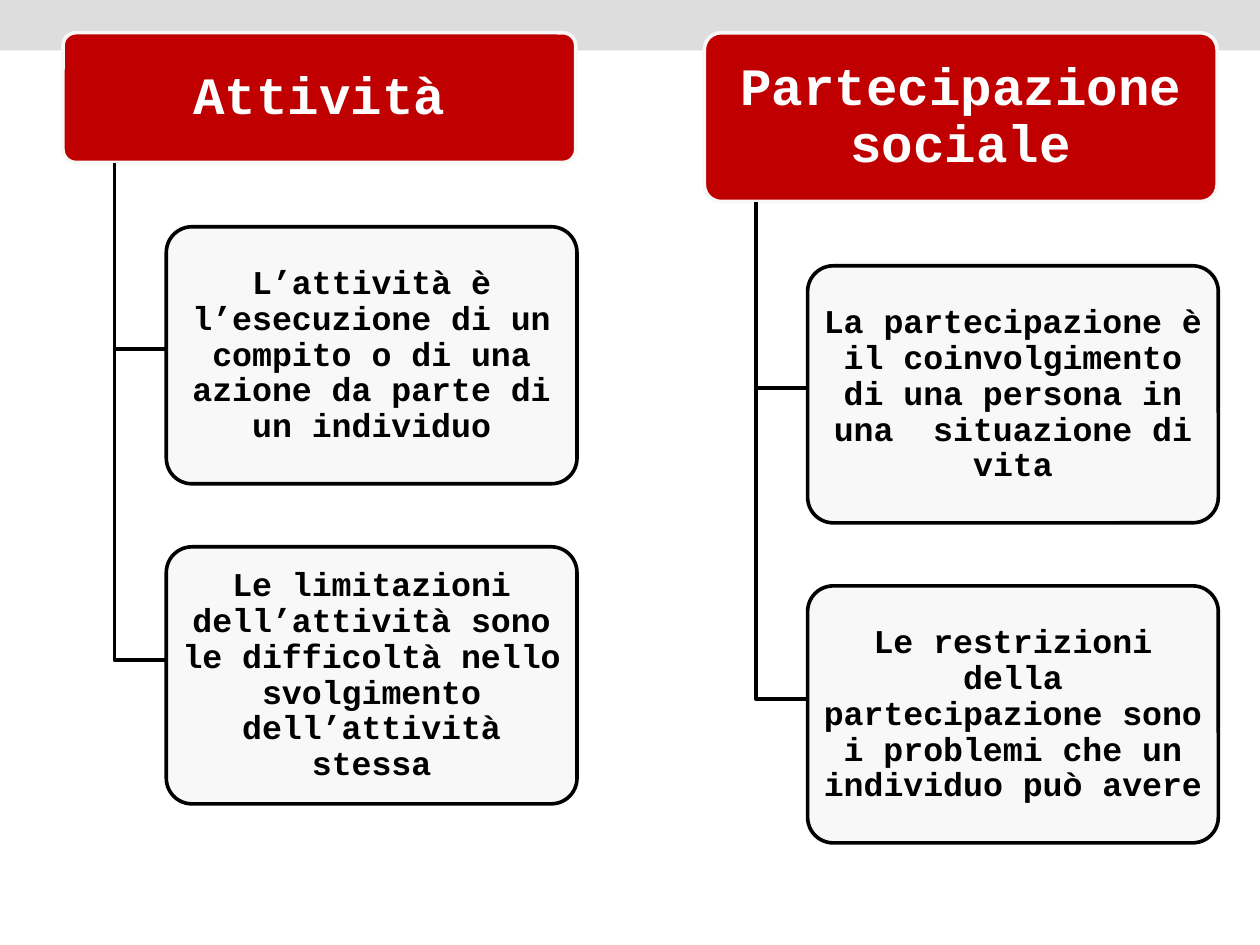
from dataclasses import dataclass

from lxml.etree import SubElement
from pptx import Presentation
from pptx.dml.color import RGBColor
from pptx.enum.shapes import MSO_SHAPE
from pptx.enum.text import MSO_ANCHOR, PP_ALIGN
from pptx.oxml.ns import qn
from pptx.util import Inches, Pt


@dataclass(frozen=True)
class Theme:
    font: str = "Courier New"
    band: str = "DDDDDD"
    accent: str = "C00000"
    pale: str = "F8F8F8"
    ink: str = "000000"
    white: str = "FFFFFF"
    head_size: int = 30
    body_size: int = 19
    line_width: float = 2.08
    corner: float = 0.1
    pale_opacity: int = 90


COLUMNS, ROWS = 100, 75
BRANCH_PITCH = 50.9
HEAD_LEFT, HEAD_TOP, HEAD_WIDTH = 5, 2.6, 40.7
TRUNK_INDENT, CHILD_INDENT = 4.1, 8.2
CHILD_WIDTH, CHILD_HEIGHT = 32.6, 20.4
CHILD_GAP, CHILD_PITCH = 5.1, 25.4
FIRST_DROP, DROP_PITCH = 14.8, 24.7

BRANCHES = [
    ("Attività", 10.3, [
        "L’attività è l’esecuzione di un compito o di una azione da parte di un individuo",
        "Le limitazioni dell’attività sono le difficoltà nello svolgimento dell’attività stessa",
    ]),
    ("Partecipazione sociale", 13.4, [
        "La partecipazione è il coinvolgimento di una persona in una  situazione di vita",
        "Le restrizioni della partecipazione sono i problemi che un individuo può avere",
    ]),
]


def write_text(box, text, *, font, size, color, margins):
    frame = box.text_frame
    frame.word_wrap = True
    frame.vertical_anchor = MSO_ANCHOR.MIDDLE
    frame.margin_left = frame.margin_right = Inches(margins[0])
    frame.margin_top = frame.margin_bottom = Inches(margins[1])
    para = frame.paragraphs[0]
    para.alignment = PP_ALIGN.CENTER
    para.line_spacing = 0.9
    span = para.add_run()
    span.text = text
    span.font.name = font
    span.font.size = Pt(size)
    span.font.bold = True
    span.font.color.rgb = RGBColor.from_string(color)


class Canvas:
    def __init__(self, deck, theme):
        self.theme = theme
        self.page = deck.slides.add_slide(deck.slide_layouts[6])
        self.column = deck.slide_width / COLUMNS
        self.row = deck.slide_height / ROWS

    def place(self, x, y):
        return round(x * self.column), round(y * self.row)

    def outline(self, shape, color):
        shape.line.color.rgb = RGBColor.from_string(color)
        shape.line.width = Pt(self.theme.line_width)

    def panel(self, kind, x, y, width, height, fill):
        shape = self.page.shapes.add_shape(
            kind, *self.place(x, y), *self.place(width, height))
        shape.shadow.inherit = False
        shape.fill.solid()
        shape.fill.fore_color.rgb = RGBColor.from_string(fill)
        return shape

    def band(self, height):
        shape = self.panel(MSO_SHAPE.RECTANGLE, 0, 0, COLUMNS, height, self.theme.band)
        shape.line.fill.background()

    def card(self, x, y, width, height, fill, line):
        box = self.panel(MSO_SHAPE.ROUNDED_RECTANGLE, x, y, width, height, fill)
        box.adjustments[0] = self.theme.corner
        self.outline(box, line)
        return box

    def head(self, x, y, height, text):
        theme = self.theme
        box = self.card(x, y, HEAD_WIDTH, height, theme.accent, theme.pale)
        write_text(box, text, font=theme.font, size=theme.head_size,
                   color=theme.white, margins=(0.06, 0.04))

    def child(self, x, y, text):
        theme = self.theme
        box = self.card(x, y, CHILD_WIDTH, CHILD_HEIGHT, theme.pale, theme.ink)
        color = box.fill._xPr.find(qn("a:solidFill"))[0]
        SubElement(color, qn("a:alpha"), val=str(theme.pale_opacity * 1000))
        write_text(box, text, font=theme.font, size=theme.body_size,
                   color=theme.ink, margins=(0.04, 0.03))

    def elbow(self, x, y, width, drop):
        builder = self.page.shapes.build_freeform(*self.place(x, y), scale=1)
        builder.add_line_segments(
            [self.place(x, y + drop), self.place(x + width, y + drop)], close=False)
        shape = builder.convert_to_shape()
        shape.shadow.inherit = False
        shape.fill.background()
        self.outline(shape, self.theme.ink)

    def branch(self, x, title, height, details):
        self.head(x, HEAD_TOP, height, title)
        bottom = HEAD_TOP + height
        for index, detail in enumerate(details):
            self.elbow(x + TRUNK_INDENT, bottom, CHILD_INDENT - TRUNK_INDENT,
                       FIRST_DROP + index * DROP_PITCH)
            self.child(x + CHILD_INDENT, bottom + CHILD_GAP + index * CHILD_PITCH, detail)


deck = Presentation()
deck.slide_width, deck.slide_height = Inches(10), Inches(7.5)
canvas = Canvas(deck, Theme())
canvas.band(4)
for number, (title, height, details) in enumerate(BRANCHES):
    canvas.branch(HEAD_LEFT + number * BRANCH_PITCH, title, height, details)
deck.save("out.pptx")
